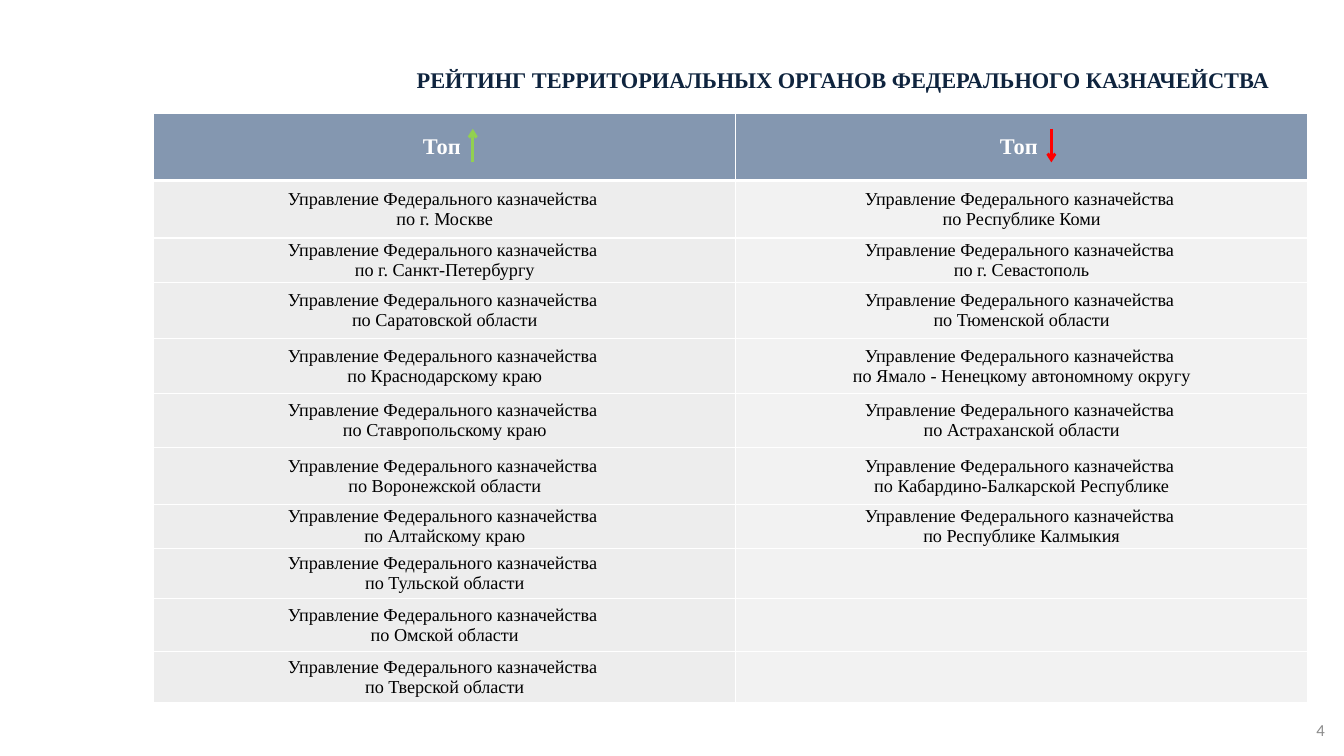
from lxml import etree
from pptx import Presentation
from pptx.dml.color import RGBColor
from pptx.enum.shapes import MSO_CONNECTOR
from pptx.enum.text import MSO_ANCHOR, MSO_AUTO_SIZE, PP_ALIGN
from pptx.oxml.ns import qn
from pptx.util import Pt

TITLE = "РЕЙТИНГ ТЕРРИТОРИАЛЬНЫХ ОРГАНОВ ФЕДЕРАЛЬНОГО КАЗНАЧЕЙСТВА"
PAGE_NUMBER = "4"
HEADING = "Топ "
OFFICE = "Управление Федерального казначейства "
LEADERS = [
    "по г. Москве",
    "по г. Санкт-Петербургу",
    "по Саратовской области",
    "по Краснодарскому краю",
    "по Ставропольскому краю",
    "по Воронежской области",
    "по Алтайскому краю",
    "по Тульской области",
    "по Омской области",
    "по Тверской области",
]
OUTSIDERS = [
    "по Республике Коми",
    "по г. Севастополь",
    "по Тюменской области",
    "по Ямало - Ненецкому автономному округу",
    "по Астраханской области",
    "по Кабардино-Балкарской Республике",
    "по Республике Калмыкия",
]

CENTER, RIGHT = PP_ALIGN.CENTER, PP_ALIGN.RIGHT
MIDDLE, TOP = MSO_ANCHOR.MIDDLE, MSO_ANCHOR.TOP
STRAIGHT = MSO_CONNECTOR.STRAIGHT
FIT_SHAPE = MSO_AUTO_SIZE.SHAPE_TO_FIT_TEXT

SERIF, SANS = "Times New Roman", "Calibri"
NAVY = RGBColor(0x0F, 0x24, 0x3E)
GREY = RGBColor(0x8C, 0x8C, 0x8C)
WHITE = RGBColor(0xFF, 0xFF, 0xFF)
BLACK = RGBColor(0, 0, 0)
STEEL = RGBColor(0x84, 0x97, 0xB0)
LEADER_FILL = RGBColor(0xED, 0xED, 0xED)
OUTSIDER_FILL = RGBColor(0xF2, 0xF2, 0xF2)
GREEN = RGBColor(0x92, 0xD0, 0x50)
RED = RGBColor(0xFF, 0, 0)

TABLE_LEFT, TABLE_TOP = 109.6, 81
COLUMN_WIDTHS = [416, 408.2]
ROW_HEIGHTS = [48, 41, 32, 40, 39, 38.5, 41, 30.5, 36, 37.5, 37]
ARROW_HIGH, ARROW_LOW = 92, 116
# x, start y, tip y, colour
ARROWS = [
    (337.7, ARROW_LOW, ARROW_HIGH, GREEN),
    (751, ARROW_HIGH, ARROW_LOW, RED),
]


def write_lines(frame, lines, align, size, color, font, bold=False):
    frame.text = "\n".join(lines)
    for paragraph in frame.paragraphs:
        paragraph.alignment = align
        paragraph.font.size = Pt(size)
        paragraph.font.name = font
        paragraph.font.bold = bold
        paragraph.font.color.rgb = color


def add_label(slide, text, box, insets, anchor, align, size, color, font, bold=False):
    label = slide.shapes.add_textbox(*map(Pt, box))
    frame = label.text_frame
    frame.margin_left = frame.margin_right = Pt(insets[0])
    frame.margin_top = frame.margin_bottom = Pt(insets[1])
    frame.vertical_anchor = anchor
    frame.word_wrap = True
    write_lines(frame, [text], align, size, color, font, bold)
    return frame


def set_borders(cell, top, bottom):
    """White cell borders; must run before the fill is set."""
    properties = cell._tc.get_or_add_tcPr()
    for side, width in (("L", 1), ("R", 1), ("T", top), ("B", bottom)):
        border = etree.SubElement(properties, qn(f"a:ln{side}"), w=str(Pt(width)))
        fill = etree.SubElement(border, qn("a:solidFill"))
        etree.SubElement(fill, qn("a:srgbClr"), val=str(WHITE))


def add_ranking(slide):
    table = slide.shapes.add_table(
        len(ROW_HEIGHTS), len(COLUMN_WIDTHS), Pt(TABLE_LEFT), Pt(TABLE_TOP),
        Pt(sum(COLUMN_WIDTHS)), Pt(sum(ROW_HEIGHTS))).table
    for row, height in zip(table.rows, ROW_HEIGHTS):
        row.height = Pt(height)
    columns = [(LEADERS, LEADER_FILL), (OUTSIDERS, OUTSIDER_FILL)]
    for c, (regions, body_fill) in enumerate(columns):
        table.columns[c].width = Pt(COLUMN_WIDTHS[c])
        for r in range(len(ROW_HEIGHTS)):
            cell = table.cell(r, c)
            cell.vertical_anchor = MIDDLE
            set_borders(cell, 3 if r == 1 else 1, 3 if r == 0 else 1)
            cell.fill.solid()
            if r == 0:
                cell.fill.fore_color.rgb = STEEL
                write_lines(cell.text_frame, [HEADING], CENTER, 16, WHITE, SERIF, True)
                continue
            cell.fill.fore_color.rgb = body_fill
            cell.margin_left = cell.margin_right = Pt(5)
            cell.margin_top = cell.margin_bottom = 0
            lines = [OFFICE, regions[r - 1]] if r <= len(regions) else []
            write_lines(cell.text_frame, lines, CENTER, 13, BLACK, SERIF)


def add_arrow(slide, x, start, tip, color):
    arrow = slide.shapes.add_connector(STRAIGHT, Pt(x), Pt(start), Pt(x), Pt(tip))
    arrow.line.color.rgb = color
    arrow.line.width = Pt(2)
    etree.SubElement(arrow.line._get_or_add_ln(), qn("a:tailEnd"), type="arrow")
    etree.SubElement(arrow._element.spPr, qn("a:effectLst"))


def main():
    deck = Presentation()
    deck.slide_width, deck.slide_height = Pt(960), Pt(540)
    slide = deck.slides.add_slide(deck.slide_layouts[6])
    title = add_label(slide, TITLE, (252, 44, 700.5, 26), (6.5, 3), TOP,
                      CENTER, 16, NAVY, SERIF, True)
    title.auto_size = FIT_SHAPE
    add_label(slide, PAGE_NUMBER, (933, 511, 20.5, 21), (7.2, 3.6), MIDDLE,
              RIGHT, 12, GREY, SANS)
    add_ranking(slide)
    for arrow in ARROWS:
        add_arrow(slide, *arrow)
    deck.save("out.pptx")


if __name__ == "__main__":
    main()
